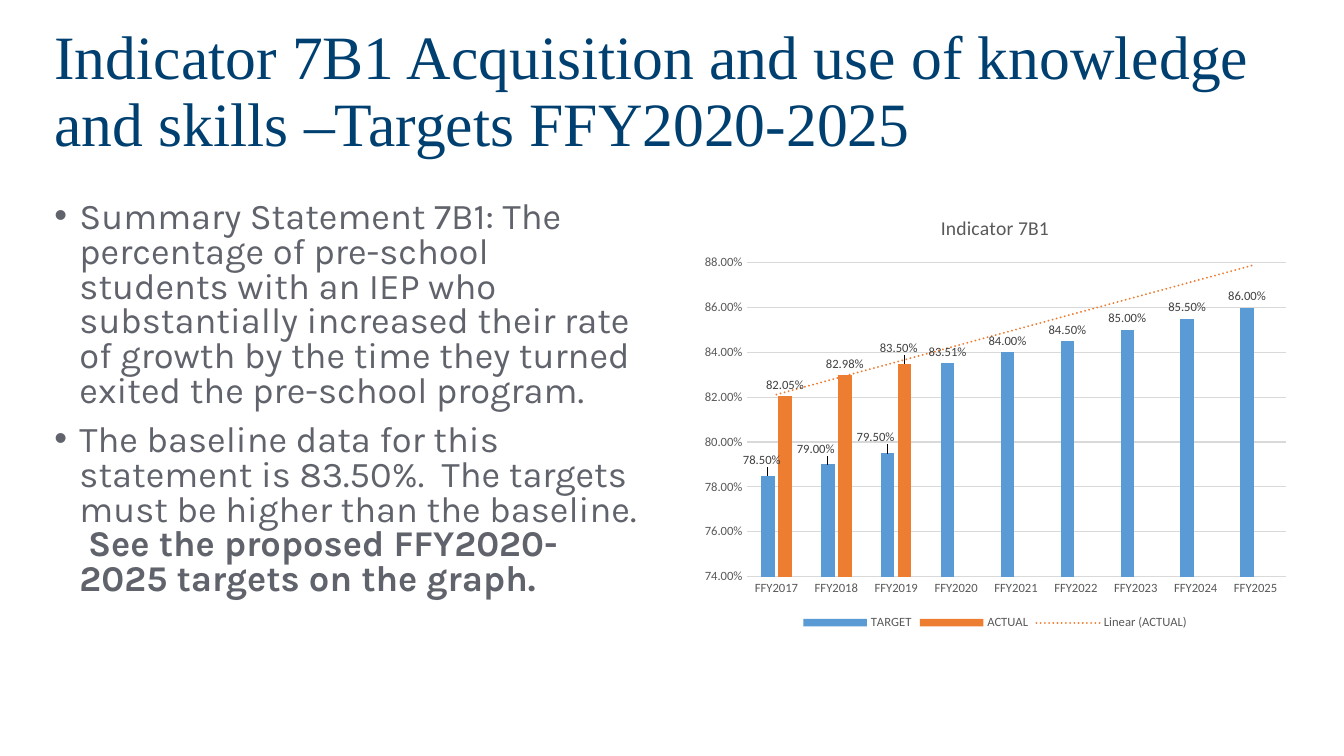
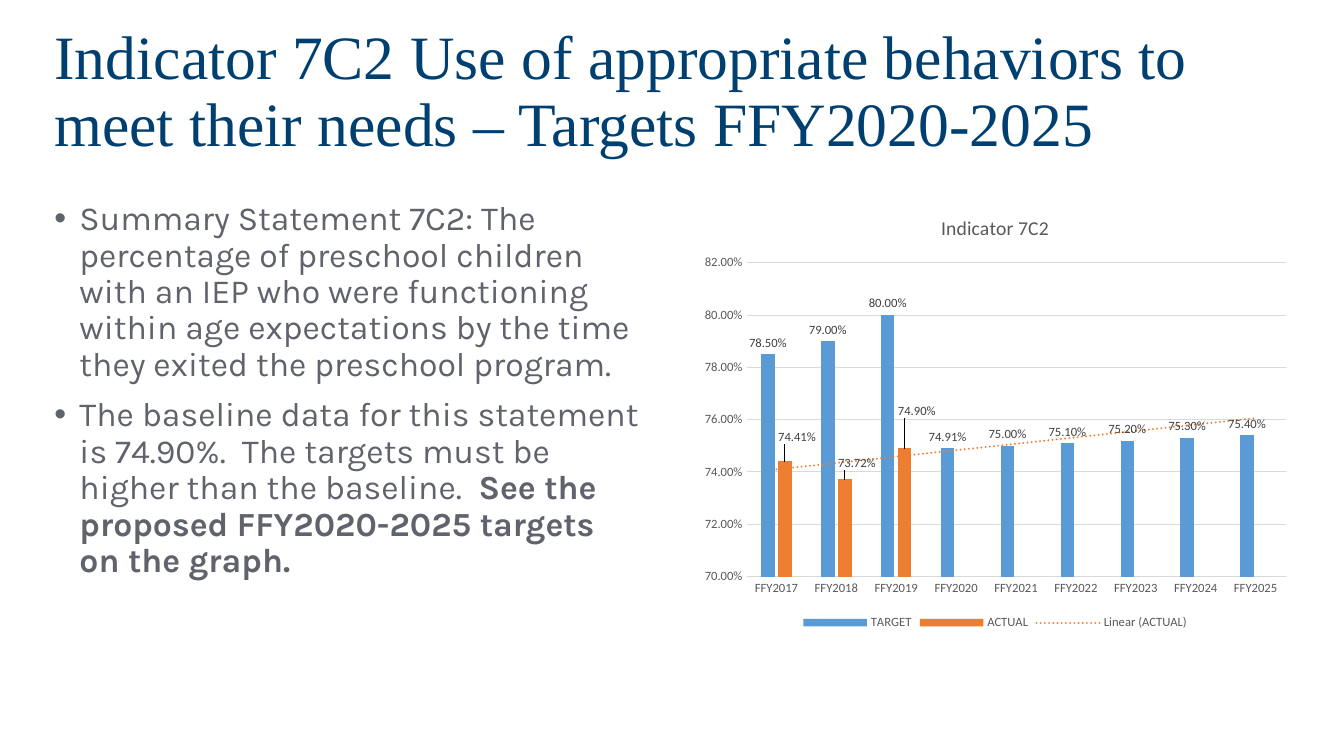
from dataclasses import dataclass, field

from pptx import Presentation
from pptx.chart.data import CategoryChartData
from pptx.dml.color import RGBColor
from pptx.enum.chart import XL_CHART_TYPE, XL_LABEL_POSITION, XL_LEGEND_POSITION, XL_TICK_MARK
from pptx.enum.text import MSO_ANCHOR, MSO_AUTO_SIZE, PP_ALIGN
from pptx.oxml import parse_xml
from pptx.oxml.ns import nsdecls, qn
from pptx.util import Inches, Pt

COLUMN = XL_CHART_TYPE.COLUMN_CLUSTERED
OUTSIDE = XL_LABEL_POSITION.OUTSIDE_END
BOTTOM = XL_LEGEND_POSITION.BOTTOM
NO_TICK = XL_TICK_MARK.NONE
MIDDLE = MSO_ANCHOR.MIDDLE
TOP = MSO_ANCHOR.TOP
LEFT = PP_ALIGN.LEFT
NO_FIT = MSO_AUTO_SIZE.NONE

COLORS = {
    "title": "004071",
    "body": "60636B",
    "target": "5B9BD5",
    "actual": "ED7D31",
    "grid": "D9D9D9",
    "axis": "595959",
    "label": "404040",
}
TITLE_FONT, BODY_FONT, CHART_FONT = "Times New Roman", "Karla", "Calibri"
SLIDE_W, SLIDE_H = 13.33, 7.5
MARGIN, COL_W, GUTTER = 0.44, 6, 0.43
TITLE_TOP, TITLE_H = 0.16, 1.53
CONTENT_TOP, CONTENT_H = 1.95, 4.34
PERCENT = "0.00%"
YEARS = [f"FFY{year}" for year in range(2017, 2026)]

Offsets = dict[int, tuple[float, float]]


@dataclass
class Series:
    name: str
    color: str
    values: list[float]
    offsets: Offsets = field(default_factory=dict)
    trend: bool = False


@dataclass
class Indicator:
    code: str
    title: str
    summary: str
    baseline: str
    call: str
    size: float
    spacing: float
    low: float
    high: float
    series: list[Series]


INDICATORS = [
    Indicator(
        "7B1",
        "Indicator 7B1 Acquisition and use of knowledge and skills –Targets FFY2020-2025",
        "Summary Statement 7B1: The percentage of pre-school students with an IEP who "
        "substantially increased their rate of growth by the time they turned exited "
        "the pre-school program.",
        "The baseline data for this statement is 83.50%.  The targets must be higher "
        "than the baseline.  ",
        "See the proposed FFY2020-2025 targets on the graph.",
        25.9, 0.8, 0.74, 0.88,
        [
            Series("TARGET", "target",
                   [0.785, 0.79, 0.795, 0.8351, 0.84, 0.845, 0.85, 0.855, 0.86],
                   {0: (-0.01, -0.01), 1: (-0.02, -0.01), 2: (-0.02, -0.01)}),
            Series("ACTUAL", "actual", [0.8205, 0.8298, 0.835],
                   {2: (-0.01, -0.01)}, trend=True),
        ],
    ),
    Indicator(
        "7C2",
        "Indicator 7C2 Use of appropriate behaviors to meet their needs – Targets FFY2020-2025",
        "Summary Statement 7C2: The percentage of preschool children with an IEP who "
        "were functioning within age expectations by the time they exited the "
        "preschool program.",
        "The baseline data for this statement is 74.90%.  The targets must be higher "
        "than the baseline.  ",
        "See the proposed FFY2020-2025 targets on the graph.",
        24.1, 0.9, 0.7, 0.82,
        [
            Series("TARGET", "target",
                   [0.785, 0.79, 0.8, 0.7491, 0.75, 0.751, 0.752, 0.753, 0.754]),
            Series("ACTUAL", "actual", [0.7441, 0.7372, 0.749],
                   {0: (0.02, -0.03), 1: (0.02, -0.01), 2: (0.02, -0.06)}, trend=True),
        ],
    ),
]


def rgb(name: str) -> RGBColor:
    return RGBColor.from_string(COLORS[name])


def style(font, face: str, size: float, color: str, bold: bool = False) -> None:
    font.name, font.size, font.bold = face, Pt(size), bold
    font.color.rgb = rgb(color)


def add_run(p, text: str, face: str, size: float, color: str, bold: bool = False) -> None:
    r = p.add_run()
    r.text = text
    style(r.font, face, size, color, bold)


def add_title(s, text: str) -> None:
    sp = s.shapes.title
    sp.left, sp.top = Inches(MARGIN), Inches(TITLE_TOP)
    sp.width, sp.height = Inches(2 * COL_W + GUTTER), Inches(TITLE_H)
    tf = sp.text_frame
    tf.word_wrap, tf.auto_size, tf.vertical_anchor = True, NO_FIT, MIDDLE
    p = tf.paragraphs[0]
    p.alignment, p.line_spacing = LEFT, 0.9
    add_run(p, text, TITLE_FONT, 44, "title")


def add_bullets(s, item: Indicator) -> None:
    sp = s.shapes.add_textbox(Inches(MARGIN), Inches(CONTENT_TOP),
                              Inches(COL_W), Inches(CONTENT_H))
    tf = sp.text_frame
    tf.word_wrap, tf.auto_size, tf.vertical_anchor = True, NO_FIT, TOP
    bullets = [[(item.summary, False)], [(item.baseline, False), (item.call, True)]]
    for i, runs in enumerate(bullets):
        p = tf.add_paragraph() if i else tf.paragraphs[0]
        pPr = p._p.get_or_add_pPr()
        pPr.set("marL", str(Inches(0.25)))
        pPr.set("indent", str(-Inches(0.25)))
        pPr.append(parse_xml(f'<a:buFont {nsdecls("a")} typeface="Arial"/>'))
        pPr.append(parse_xml(f'<a:buChar {nsdecls("a")} char="•"/>'))
        p.alignment, p.line_spacing = LEFT, item.spacing
        p.space_before = Pt(10 if i else 0)
        for text, bold in runs:
            add_run(p, text, BODY_FONT, item.size, "body", bold)


def format_labels(plotted, offsets: Offsets) -> None:
    labels = plotted.data_labels
    labels.show_value, labels.position = True, OUTSIDE
    labels.number_format, labels.number_format_is_linked = PERCENT, False
    style(labels.font, CHART_FONT, 9, "label")
    for index, (dx, dy) in offsets.items():
        label = plotted.points[index].data_label
        style(label.font, CHART_FONT, 9, "label")
        label.position = OUTSIDE
        dLbl = labels._element.find(f'{qn("c:dLbl")}[{qn("c:idx")}][@val]')
        for candidate in labels._element.findall(qn("c:dLbl")):
            if candidate.find(qn("c:idx")).get("val") == str(index):
                dLbl = candidate
        dLbl.find(qn("c:idx")).addnext(parse_xml(
            f'<c:layout {nsdecls("c")}><c:manualLayout>'
            f'<c:x val="{dx}"/><c:y val="{dy}"/></c:manualLayout></c:layout>'))


def add_trend(plotted, color: str) -> None:
    plotted._element.find(qn("c:cat")).addprevious(parse_xml(
        f'<c:trendline {nsdecls("c", "a")}><c:spPr><a:ln w="{Pt(1.5)}" cap="rnd">'
        f'<a:solidFill><a:srgbClr val="{COLORS[color]}"/></a:solidFill>'
        '<a:prstDash val="sysDot"/></a:ln></c:spPr><c:trendlineType val="linear"/>'
        '<c:dispRSqr val="0"/><c:dispEq val="0"/></c:trendline>'))


def format_axes(chart, low: float, high: float) -> None:
    category, value = chart.category_axis, chart.value_axis
    for axis in (category, value):
        axis.major_tick_mark = axis.minor_tick_mark = NO_TICK
        style(axis.tick_labels.font, CHART_FONT, 9, "axis")
    value.minimum_scale, value.maximum_scale, value.major_unit = low, high, 0.02
    value.tick_labels.number_format = PERCENT
    value.tick_labels.number_format_is_linked = False
    value.format.line.fill.background()
    value.has_major_gridlines = True
    for line in (category.format.line, value.major_gridlines.format.line):
        line.color.rgb, line.width = rgb("grid"), Pt(0.75)


def add_indicator_chart(s, item: Indicator) -> None:
    data = CategoryChartData(number_format=PERCENT)
    data.categories = YEARS
    for series in item.series:
        missing = len(YEARS) - len(series.values)
        data.add_series(series.name, series.values + [None] * missing)
    chart = s.shapes.add_chart(COLUMN, Inches(MARGIN + COL_W + GUTTER), Inches(CONTENT_TOP),
                               Inches(COL_W), Inches(CONTENT_H), data).chart
    chart.font.name, chart.font.size = CHART_FONT, Pt(10)
    chart.has_title = True
    add_run(chart.chart_title.text_frame.paragraphs[0], f"Indicator {item.code}",
            CHART_FONT, 14, "axis")
    chart.chart_title.include_in_layout = False
    chart.has_legend = True
    chart.legend.position, chart.legend.include_in_layout = BOTTOM, False
    style(chart.legend.font, CHART_FONT, 9, "axis")
    format_axes(chart, item.low, item.high)
    plot = chart.plots[0]
    plot.gap_width, plot.overlap, plot.vary_by_categories = 219, -27, False
    for plotted, series in zip(plot.series, item.series):
        plotted.format.fill.solid()
        plotted.format.fill.fore_color.rgb = rgb(series.color)
        plotted.invert_if_negative = False
        format_labels(plotted, series.offsets)
        if series.trend:
            add_trend(plotted, series.color)


def main() -> None:
    prs = Presentation()
    prs.slide_width, prs.slide_height = Inches(SLIDE_W), Inches(SLIDE_H)
    title_only = prs.slide_layouts[5]
    for item in INDICATORS:
        s = prs.slides.add_slide(title_only)
        add_title(s, item.title)
        add_bullets(s, item)
        add_indicator_chart(s, item)
    prs.save("out.pptx")


if __name__ == "__main__":
    main()
